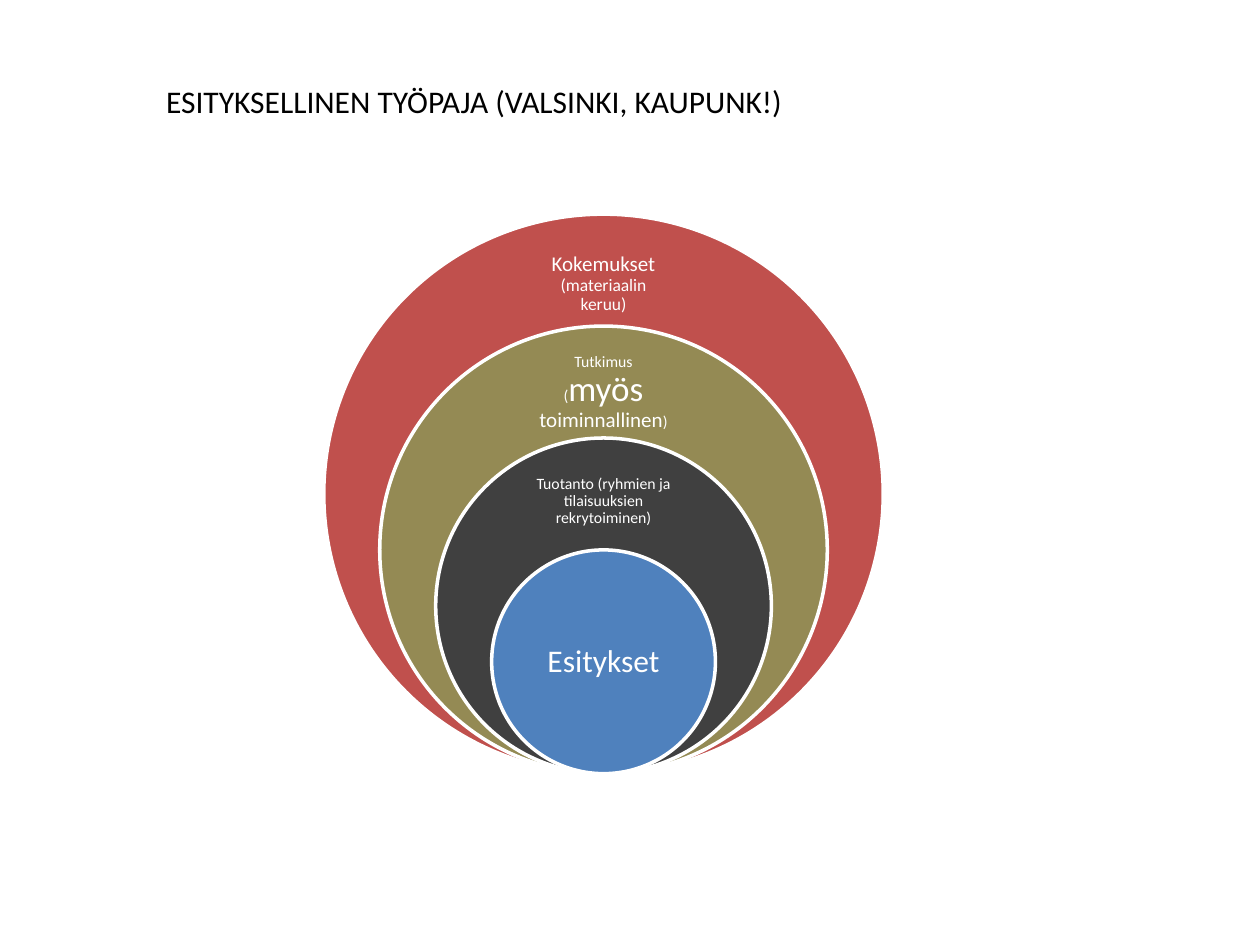
from pptx import Presentation
from pptx.dml.color import RGBColor
from pptx.enum.shapes import MSO_SHAPE
from pptx.enum.text import MSO_ANCHOR, PP_ALIGN
from pptx.util import Inches, Pt

OVAL = MSO_SHAPE.OVAL
MIDDLE = MSO_ANCHOR.MIDDLE
CENTER = PP_ALIGN.CENTER

BLACK = RGBColor(0x00, 0x00, 0x00)
WHITE = RGBColor(0xFF, 0xFF, 0xFF)
RED = RGBColor(0xC0, 0x50, 0x4D)
OLIVE = RGBColor(0x94, 0x8A, 0x54)
CHARCOAL = RGBColor(0x40, 0x40, 0x40)
BLUE = RGBColor(0x4F, 0x81, 0xBD)

FONT = "Calibri"
CENTER_X = 4.79
BASELINE = 6.14
OUTER_DIAMETER = 4.44

# Outermost first: colour, label (top, width, height, inset), (text, size) pieces
STAGES = [
    (RED, (1.92, 1.24, 0.67, 0.09),
     [("Kokemukset", 12), (" (materiaalin keruu)", 10)]),
    (OLIVE, (2.8, 1.24, 0.64, 0.07),
     [("Tutkimus (", 9), ("myös", 20), (" ", 9), ("toiminnallinen", 12), (")", 9)]),
    (CHARCOAL, (3.68, 1.24, 0.6, 0.07),
     [("Tuotanto (ryhmien ja tilaisuuksien rekrytoiminen)", 9)]),
    (BLUE, (4.81, 1.26, 0.89, 0.14), [("Esitykset", 18)]),
]


def add_text(slide, left, top, width, height, pieces, color):
    """Add a wrapping one-paragraph text box made of (text, size) pieces."""
    box = slide.shapes.add_textbox(
        Inches(left), Inches(top), Inches(width), Inches(height))
    frame = box.text_frame
    frame.word_wrap = True
    for text, size in pieces:
        run = frame.paragraphs[0].add_run()
        run.text = text
        run.font.name = FONT
        run.font.size = Pt(size)
        run.font.color.rgb = color
    return frame


def add_circle(slide, diameter, color):
    """Add a circle resting on the common baseline."""
    circle = slide.shapes.add_shape(
        OVAL, Inches(CENTER_X - diameter / 2), Inches(BASELINE - diameter),
        Inches(diameter), Inches(diameter))
    circle.shadow.inherit = False
    circle.fill.solid()
    circle.fill.fore_color.rgb = color
    circle.line.color.rgb = WHITE
    circle.line.width = Pt(2)


def add_label(slide, top, width, height, inset, pieces):
    frame = add_text(slide, CENTER_X - width / 2, top, width, height, pieces, WHITE)
    frame.vertical_anchor = MIDDLE
    frame.margin_left = frame.margin_right = Inches(inset)
    frame.margin_top = frame.margin_bottom = Inches(inset)
    frame.paragraphs[0].alignment = CENTER
    frame.paragraphs[0].line_spacing = 0.9


def main():
    prs = Presentation()
    prs.slide_width, prs.slide_height = Inches(10), Inches(7.5)
    slide = prs.slides.add_slide(prs.slide_layouts[6])

    add_text(slide, 1.22, 0.6, 7.56, 0.4,
             [("ESITYKSELLINEN TYÖPAJA (VALSINKI, KAUPUNK!)", 18)], BLACK)
    for level, (color, label_box, pieces) in enumerate(STAGES):
        add_circle(slide, OUTER_DIAMETER * (1 - 0.2 * level), color)
        add_label(slide, *label_box, pieces)

    prs.save("out.pptx")


if __name__ == "__main__":
    main()
